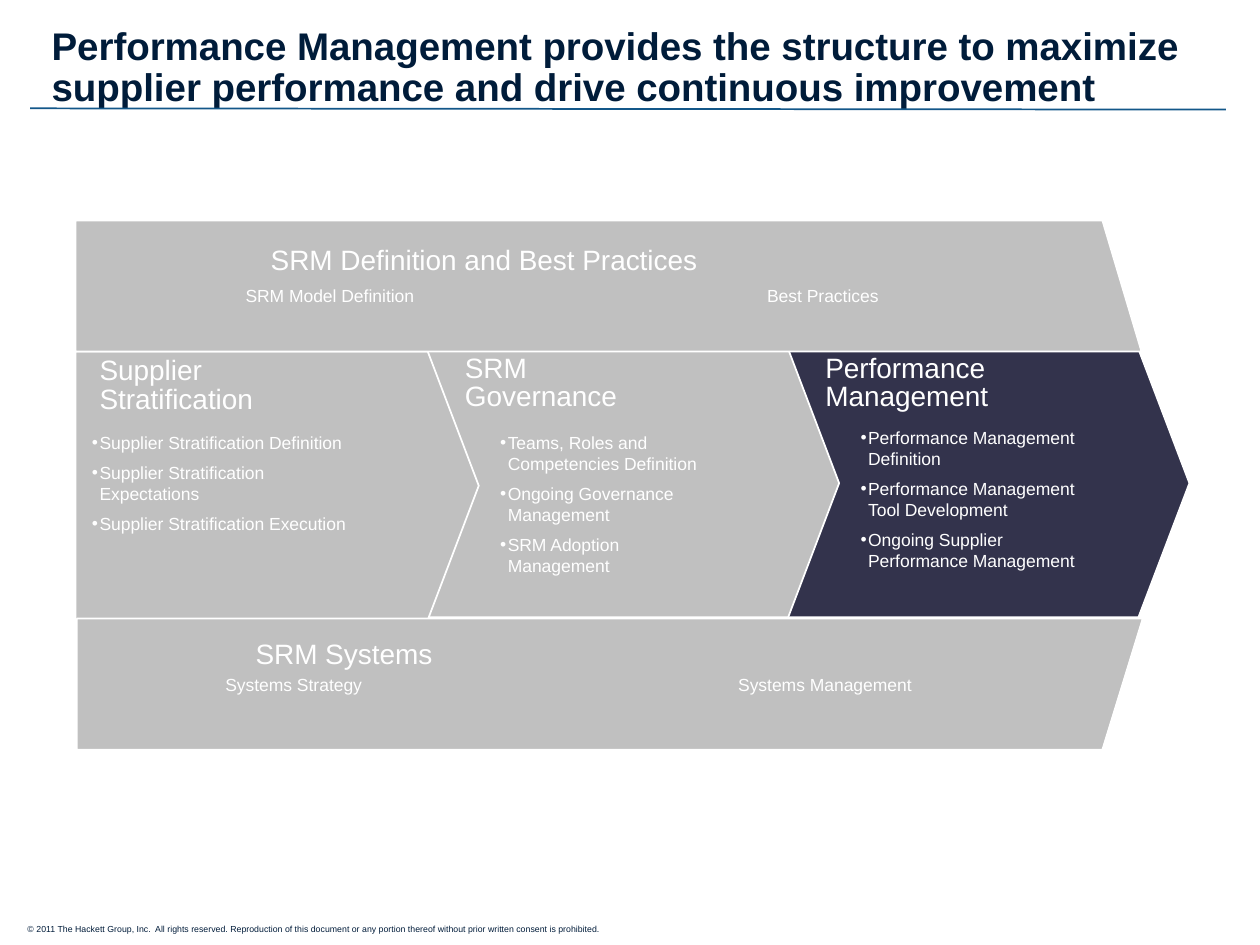
"""Build the supplier relationship management framework slide."""
from dataclasses import dataclass

from lxml import etree
from pptx import Presentation
from pptx.dml.color import RGBColor
from pptx.enum.shapes import MSO_CONNECTOR, MSO_SHAPE
from pptx.enum.text import MSO_ANCHOR, MSO_AUTO_SIZE, PP_ALIGN
from pptx.oxml.ns import qn
from pptx.util import Inches, Pt

PENTAGON = MSO_SHAPE.PENTAGON
STRAIGHT = MSO_CONNECTOR.STRAIGHT
TOP, MIDDLE = MSO_ANCHOR.TOP, MSO_ANCHOR.MIDDLE
NO_AUTOFIT = MSO_AUTO_SIZE.NONE
LEFT = PP_ALIGN.LEFT

NAVY = RGBColor(0x00, 0x1C, 0x3A)
RULE_BLUE = RGBColor(0x13, 0x57, 0x89)
INDIGO = RGBColor(0x33, 0x33, 0x4C)
GREY = RGBColor(0xC0, 0xC0, 0xC0)
WHITE = RGBColor(0xFF, 0xFF, 0xFF)


@dataclass
class Frame:
    left: float
    top: float
    width: float
    height: float

    def lengths(self) -> tuple:
        return tuple(map(Inches, (self.left, self.top, self.width, self.height)))


@dataclass
class Stage:
    frame: Frame
    heading: str
    indent: float
    fill: RGBColor
    list_index: int
    list_frame: Frame
    items: tuple


@dataclass
class Band:
    points: tuple


@dataclass
class Label:
    frame: Frame
    text: str
    size: int
    color: RGBColor = WHITE


STAGES = (
    Stage(Frame(6.24, 2.77, 3.2, 2.13), "Performance\vManagement", 0.31, INDIGO,
          4, Frame(6.73, 3.34, 1.9, 1.27),
          ("Performance Management Definition",
           "Performance Management Tool Development",
           "Ongoing Supplier Performance Management")),
    Stage(Frame(3.38, 2.77, 3.28, 2.13), "SRM\nGovernance", 0.31, GREY,
          2, Frame(3.87, 3.38, 1.92, 1.77),
          ("Teams, Roles and Competencies Definition",
           "Ongoing Governance Management",
           "SRM Adoption Management")),
    Stage(Frame(0.6, 2.79, 3.2, 2.13), "Supplier\nStratification", 0.19, GREY,
          1, Frame(0.63, 3.38, 2.26, 0.93),
          ("Supplier Stratification Definition",
           "Supplier Stratification Expectations",
           "Supplier Stratification Execution")),
)
BANDS = (
    Band(((0.6, 2.79), (0.6, 1.75), (8.75, 1.75), (9.06, 2.79))),
    Band(((0.61, 4.91), (0.61, 5.95), (8.75, 5.95), (9.07, 4.91))),
)
LABELS = (
    Label(Frame(2.05, 1.88, 5.52, 0.37), "SRM Definition and Best Practices", 16),
    Label(Frame(1.85, 2.21, 1.82, 0.27), "SRM Model Definition", 10),
    Label(Frame(5.99, 2.21, 1.76, 0.27), "Best Practices", 10),
    Label(Frame(1.93, 5, 5.87, 0.37), "SRM Systems", 16),
    Label(Frame(1.69, 5.3, 2.14, 0.27), "Systems Strategy", 10),
    Label(Frame(5.76, 5.3, 2.41, 0.27), "Systems Management", 10),
    Label(Frame(0.12, 7.28, 6.14, 0.18),
          "© 2011 The Hackett Group, Inc.  All rights reserved. Reproduction of this "
          "document or any portion thereof without prior written consent is prohibited.",
          5, NAVY),
)


def set_font(paragraph, size: int, color: RGBColor, bold: bool = False) -> None:
    font = paragraph.font
    font.name, font.size, font.bold = "Arial", Pt(size), bold
    font.color.rgb = color


def set_margins(text_frame, *margins: float) -> None:
    (text_frame.margin_left, text_frame.margin_top,
     text_frame.margin_right, text_frame.margin_bottom) = map(Inches, margins)


def set_indent(paragraph, margin: float, first: float = 0) -> None:
    properties = paragraph._p.get_or_add_pPr()
    properties.set("marL", str(Inches(margin)))
    properties.set("indent", str(Inches(first)))


def place(shape, frame: Frame) -> None:
    shape.left, shape.top, shape.width, shape.height = frame.lengths()


def paint(shape, fill: RGBColor) -> None:
    shape.shadow.inherit = False
    shape.fill.solid()
    shape.fill.fore_color.rgb = fill
    shape.line.color.rgb = WHITE
    shape.line.width = Pt(1)


def draw_title(page) -> None:
    title = page.shapes.title
    place(title, Frame(0.41, -0.04, 9, 1.17))
    text_frame = title.text_frame
    text_frame.text = ("Performance Management provides the structure to maximize "
                       "supplier performance and drive continuous improvement")
    text_frame.auto_size = NO_AUTOFIT
    text_frame.vertical_anchor = MIDDLE
    set_margins(text_frame, 0, 0, 0, 0)
    paragraph = text_frame.paragraphs[0]
    paragraph.alignment = LEFT
    paragraph.line_spacing = 0.9
    set_font(paragraph, 22, NAVY, bold=True)


def draw_rule(page) -> None:
    rule = page.shapes.add_connector(
        STRAIGHT, Inches(0.24), Inches(0.86), Inches(9.73), Inches(0.87))
    rule.line.color.rgb = RULE_BLUE
    rule.line.width = Pt(1)
    etree.SubElement(rule._element.spPr, qn("a:effectLst"))


def draw_stage(page, stage: Stage) -> None:
    arrow = page.shapes.add_shape(PENTAGON, *stage.frame.lengths())
    arrow.adjustments[0] = 0.19
    paint(arrow, stage.fill)
    text_frame = arrow.text_frame
    text_frame.text = stage.heading
    text_frame.vertical_anchor = TOP
    set_margins(text_frame, 0, 0.05, 0.2, 0.05)
    for paragraph in text_frame.paragraphs:
        set_indent(paragraph, stage.indent)
        paragraph.alignment = LEFT
        paragraph.line_spacing = 0.85
        set_font(paragraph, 16, WHITE)


def draw_band(page, band: Band) -> None:
    points = [(Inches(x), Inches(y)) for x, y in band.points]
    builder = page.shapes.build_freeform(*points[0])
    builder.add_line_segments(points[1:], close=True)
    paint(builder.convert_to_shape(), GREY)


def draw_label(page, label: Label) -> None:
    box = page.shapes.add_textbox(*label.frame.lengths())
    box.text_frame.word_wrap = True
    box.text_frame.text = label.text
    set_font(box.text_frame.paragraphs[0], label.size, label.color)


def draw_list(page, stage: Stage) -> None:
    body = page.placeholders[stage.list_index]
    place(body, stage.list_frame)
    page.shapes._spTree.append(body._element)
    text_frame = body.text_frame
    text_frame.text = "\n".join(stage.items)
    text_frame.auto_size = NO_AUTOFIT
    text_frame.vertical_anchor = TOP
    for number, paragraph in enumerate(text_frame.paragraphs):
        set_indent(paragraph, 0.06, -0.06)
        bullet = etree.SubElement(paragraph._p.get_or_add_pPr(), qn("a:buChar"))
        bullet.set("char", "•")
        paragraph.space_before = Pt(5 if number else 0)
        set_font(paragraph, 10, WHITE)


def main() -> None:
    deck = Presentation()
    deck.slide_width, deck.slide_height = Inches(10), Inches(7.5)
    page = deck.slides.add_slide(deck.slide_layouts.get_by_name("Comparison"))
    unused = page.placeholders[3]._element
    unused.getparent().remove(unused)
    draw_title(page)
    draw_rule(page)
    for stage in STAGES:
        draw_stage(page, stage)
    for band in BANDS:
        draw_band(page, band)
    for label in LABELS:
        draw_label(page, label)
    for stage in STAGES:
        draw_list(page, stage)
    deck.save("out.pptx")


if __name__ == "__main__":
    main()
